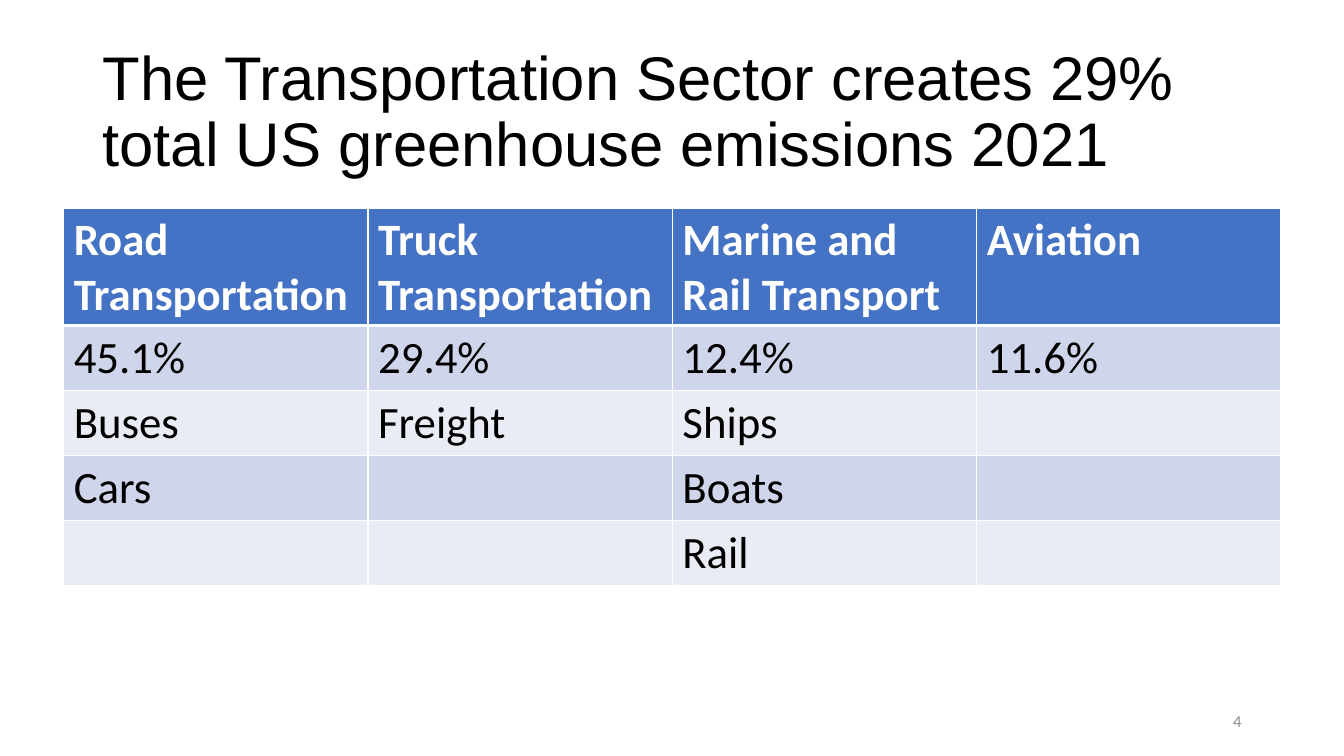
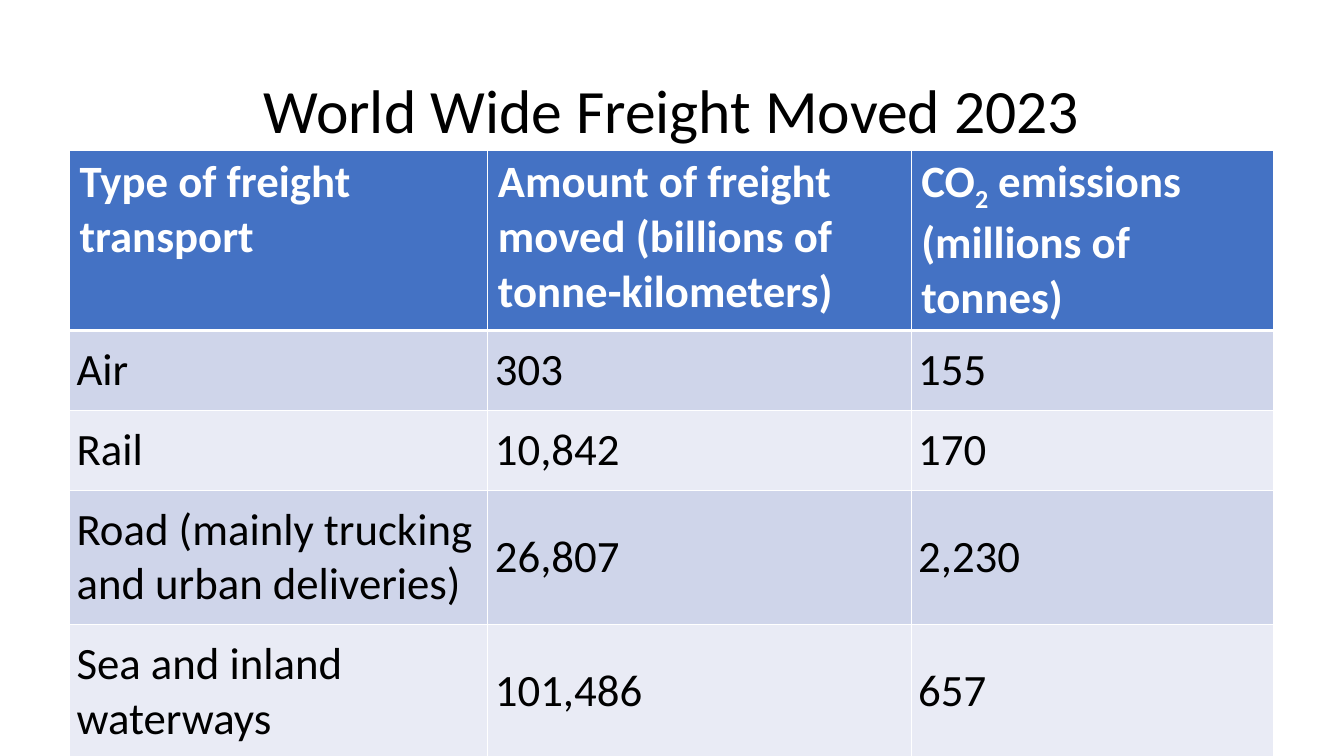
from lxml.etree import SubElement
from pptx import Presentation
from pptx.dml.color import RGBColor
from pptx.enum.text import MSO_ANCHOR, MSO_AUTO_SIZE, PP_ALIGN
from pptx.oxml.ns import qn
from pptx.util import Pt

BLACK, WHITE, GREY = "000000", "FFFFFF", "8C8C8C"
HEAD, BANDS = "4472C4", ("CFD5EA", "E9EBF5")
BODY = "Calibri"
THIN, THICK = 1, 3

MODES = [
    ["Road Transportation", "Truck Transportation", "Marine and Rail Transport", "Aviation"],
    ["45.1%", "29.4%", "12.4%", "11.6%"],
    ["Buses", "Freight", "Ships", ""],
    ["Cars", "", "Boats", ""],
    ["", "", "Rail", ""],
]
FREIGHT = [
    ["Type of freight transport",
     "Amount of freight moved (billions of tonne-kilometers)",
     [("CO", 0), ("2", -25), (" emissions (millions of tonnes)", 0)]],
    ["Air", "303", "155"],
    ["Rail", "10,842", "170"],
    ["Road (mainly trucking and urban deliveries)", "26,807", "2,230"],
    ["Sea and inland waterways", "101,486", "657"],
]


def ink(code):
    """Turn a hex string into a colour."""
    return RGBColor.from_string(code)


def write(frame, text, size=32, font=BODY, color=BLACK, bold=False,
          align=PP_ALIGN.LEFT, lead=None):
    """Write a string, or a list of (text, baseline percent) runs, in a frame."""
    para = frame.paragraphs[0]
    para.alignment = align
    para.line_spacing = lead
    para.font.size = Pt(size)
    for words, base in [(text, 0)] if isinstance(text, str) else text:
        run = para.add_run()
        run.text = words
        run.font.size = Pt(size)
        run.font.name = font
        run.font.bold = bold
        run.font.color.rgb = ink(color)
        if base:
            run._r.get_or_add_rPr().set("baseline", str(base * 1000))


def place(shape, left, top, width, height):
    """Move and size a shape in points."""
    shape.left, shape.top = Pt(left), Pt(top)
    shape.width, shape.height = Pt(width), Pt(height)


def start(deck, title, **style):
    """Add a slide with the shared title format."""
    slide = deck.slides.add_slide(deck.slide_layouts[5])
    shape = slide.shapes.title
    place(shape, 66, 28.75, 828, 104.4)
    frame = shape.text_frame
    frame.word_wrap = True
    frame.auto_size = MSO_AUTO_SIZE.NONE
    frame.vertical_anchor = MSO_ANCHOR.MIDDLE
    write(frame, title, size=44, lead=0.9, **style)
    return slide


def number(slide, text):
    """Add the slide number at the lower right."""
    box = slide.shapes.add_textbox(Pt(678), Pt(500.5), Pt(216), Pt(28.75))
    box.text_frame.word_wrap = True
    box.text_frame.vertical_anchor = MSO_ANCHOR.MIDDLE
    write(box.text_frame, text, size=12, color=GREY, align=PP_ALIGN.RIGHT)


def border(cell, **widths):
    """Draw white borders on a cell, one width in points per side."""
    props = cell._tc.get_or_add_tcPr()
    for side in "LRTB":
        line = SubElement(props, qn("a:ln" + side), w=str(Pt(widths.get(side, THIN))))
        fill = SubElement(line, qn("a:solidFill"))
        SubElement(fill, qn("a:srgbClr"), val=WHITE)


def paint(cell, row, text, inset):
    """Format and fill one cell by its row."""
    head = row == 0
    border(cell, B=THICK if head else THIN, T=THICK if row == 1 else THIN)
    cell.fill.solid()
    cell.fill.fore_color.rgb = ink(HEAD if head else BANDS[(row - 1) % 2])
    if inset and not head:
        cell.vertical_anchor = MSO_ANCHOR.MIDDLE
        cell.margin_left = cell.margin_right = Pt(inset[0])
        cell.margin_top = cell.margin_bottom = Pt(inset[1])
    if text:
        write(cell.text_frame, text, color=WHITE if head else BLACK, bold=head)


def grid(slide, data, left, top, cols, rows, inset=None):
    """Add a banded table with given column widths and row heights."""
    table = slide.shapes.add_table(len(rows), len(cols), Pt(left), Pt(top),
                                   Pt(sum(cols)), Pt(sum(rows))).table
    table.horz_banding = False
    for col, width in zip(table.columns, cols):
        col.width = Pt(width)
    for row, height in zip(table.rows, rows):
        row.height = Pt(height)
    for i, line in enumerate(data):
        for j, text in enumerate(line):
            paint(table.cell(i, j), i, text, inset)


def main():
    """Build both slides and save them."""
    deck = Presentation()
    deck.slide_width, deck.slide_height = Pt(960), Pt(540)

    slide = start(deck, "The Transportation Sector creates 29% total US greenhouse emissions 2021",
                  font="Arial")
    number(slide, "4")
    grid(slide, MODES, 45.5, 148.5, [217.4] * 4, [84] + [46.4] * 4)

    slide = start(deck, "World Wide Freight Moved 2023", align=PP_ALIGN.CENTER)
    grid(slide, FREIGHT, 49.7, 107.2, [298.8, 302.4, 259.2], [127.5, 57, 57, 96, 96],
         inset=(5, 8.6))

    deck.save("out.pptx")


if __name__ == "__main__":
    main()
